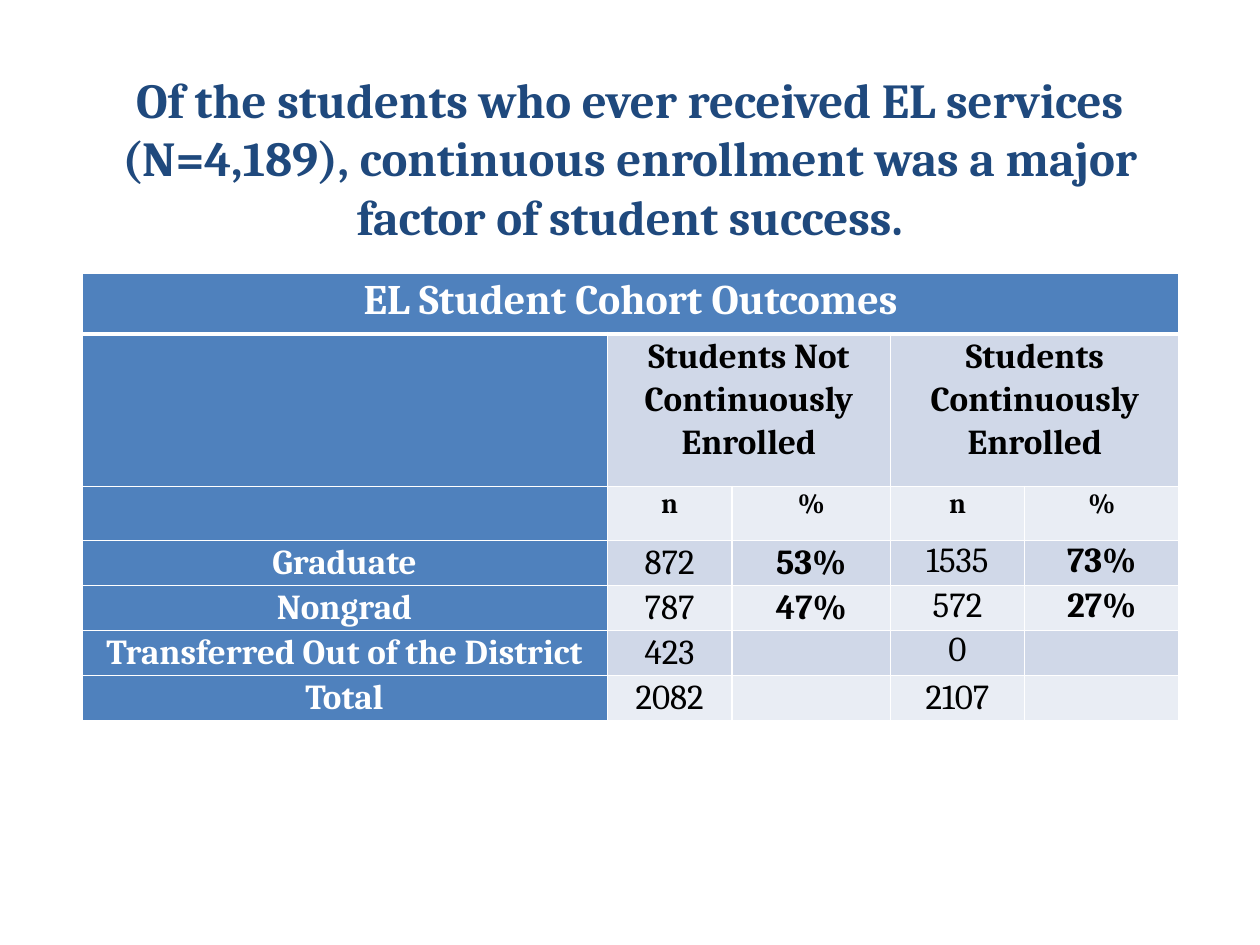
from lxml import etree
from pptx import Presentation
from pptx.dml.color import RGBColor
from pptx.enum.text import MSO_ANCHOR, PP_ALIGN
from pptx.oxml.ns import qn
from pptx.util import Inches, Pt

CENTER = PP_ALIGN.CENTER
MIDDLE = MSO_ANCHOR.MIDDLE

NAVY = RGBColor(0x1F, 0x49, 0x7D)
BLUE = RGBColor(0x4F, 0x81, 0xBD)
BAND_DARK = RGBColor(0xD0, 0xD8, 0xE8)
BAND_LIGHT = RGBColor(0xE9, 0xED, 0xF4)
WHITE = RGBColor(0xFF, 0xFF, 0xFF)
BLACK = RGBColor(0, 0, 0)

COL_WIDTHS = [4.17, 0.99, 1.26, 1.06, 1.23]
ROW_HEIGHTS = [0.48, 1.21, 0.43] + [0.34] * 4
ROW_SIZES = [24, 20, 16] + [20] * 4
ROWS = [
    ["EL Student Cohort Outcomes", "", "", "", ""],
    ["", "Students Not Continuously Enrolled", "",
     "Students Continuously Enrolled", ""],
    ["", "n", "%", "n", "%"],
    ["Graduate", "872", "53%", "1535", "73%"],
    ["Nongrad", "787", "47%", "572", "27%"],
    ["Transferred Out of the District", "423", "", "0", ""],
    ["Total", "2082", "", "2107", ""],
]
MERGES = [(0, 0, 4), (1, 1, 2), (1, 3, 4)]  # row, first column, last column


class Deck:
    font = "Cambria"

    def __init__(self, prs):
        self.slide = prs.slides.add_slide(prs.slide_layouts[6])

    def set_text(self, tf, text, size, color, bold=True, spacing=1.0):
        tf.text = text
        p = tf.paragraphs[0]
        p.alignment = CENTER
        p.line_spacing = spacing
        for r in p.runs:
            r.font.name = self.font
            r.font.size = Pt(size)
            r.font.bold = bold
            r.font.color.rgb = color

    def title(self, text, x, y, w, h):
        tb = self.slide.shapes.add_textbox(
            Inches(x), Inches(y), Inches(w), Inches(h))
        tf = tb.text_frame
        tf.word_wrap = True
        tf.vertical_anchor = MIDDLE
        tf.margin_top = tf.margin_bottom = 0
        self.set_text(tf, text, 27.9, NAVY)

    def borders(self, cell, bottom=1, top=1):
        tcPr = cell._tc.get_or_add_tcPr()
        widths = {"a:lnL": 1, "a:lnR": 1, "a:lnT": top, "a:lnB": bottom}
        for i, (tag, width) in enumerate(widths.items()):
            ln = etree.Element(qn(tag), w=str(Pt(width)))
            fill = etree.SubElement(ln, qn("a:solidFill"))
            etree.SubElement(fill, qn("a:srgbClr"), val=str(WHITE))
            tcPr.insert(i, ln)

    def cell(self, cell, row, col, text):
        header = row == 0 or col == 0
        body = row >= 3
        cell.margin_left = cell.margin_right = Inches(0.07)
        cell.margin_top = cell.margin_bottom = 0
        cell.fill.solid()
        cell.fill.fore_color.rgb = (
            BLUE if header else BAND_DARK if row % 2 else BAND_LIGHT)
        self.borders(cell, bottom=3 if row == 0 else 1,
                     top=3 if row == 1 else 1)
        # Counts are regular; labels and percentages are bold
        bold = header or not body or text.endswith("%")
        spacing = 1.0 if row in (3, 4, 5) and col >= 3 else 1.07
        self.set_text(cell.text_frame, text, ROW_SIZES[row],
                      WHITE if header else BLACK, bold, spacing)

    def table(self, x, y):
        table = self.slide.shapes.add_table(
            len(ROWS), len(COL_WIDTHS), Inches(x), Inches(y),
            Inches(sum(COL_WIDTHS)), Inches(sum(ROW_HEIGHTS))).table
        for column, width in zip(table.columns, COL_WIDTHS):
            column.width = Inches(width)
        for row, height in zip(table.rows, ROW_HEIGHTS):
            row.height = Inches(height)
        for i, texts in enumerate(ROWS):
            for j, text in enumerate(texts):
                self.cell(table.cell(i, j), i, j, text)
        for row, first, last in MERGES:
            table.cell(row, first).merge(table.cell(row, last))


def main():
    prs = Presentation()
    prs.slide_width = Inches(10)
    prs.slide_height = Inches(7.5)
    deck = Deck(prs)

    # Headline
    deck.title("Of the students who ever received EL services (N=4,189), "
               "continuous enrollment was a major factor of student success.",
               0.5, 0.55, 9, 1.4)

    # Cohort outcomes
    deck.table(0.65, 2.17)

    prs.save("out.pptx")


if __name__ == "__main__":
    main()
